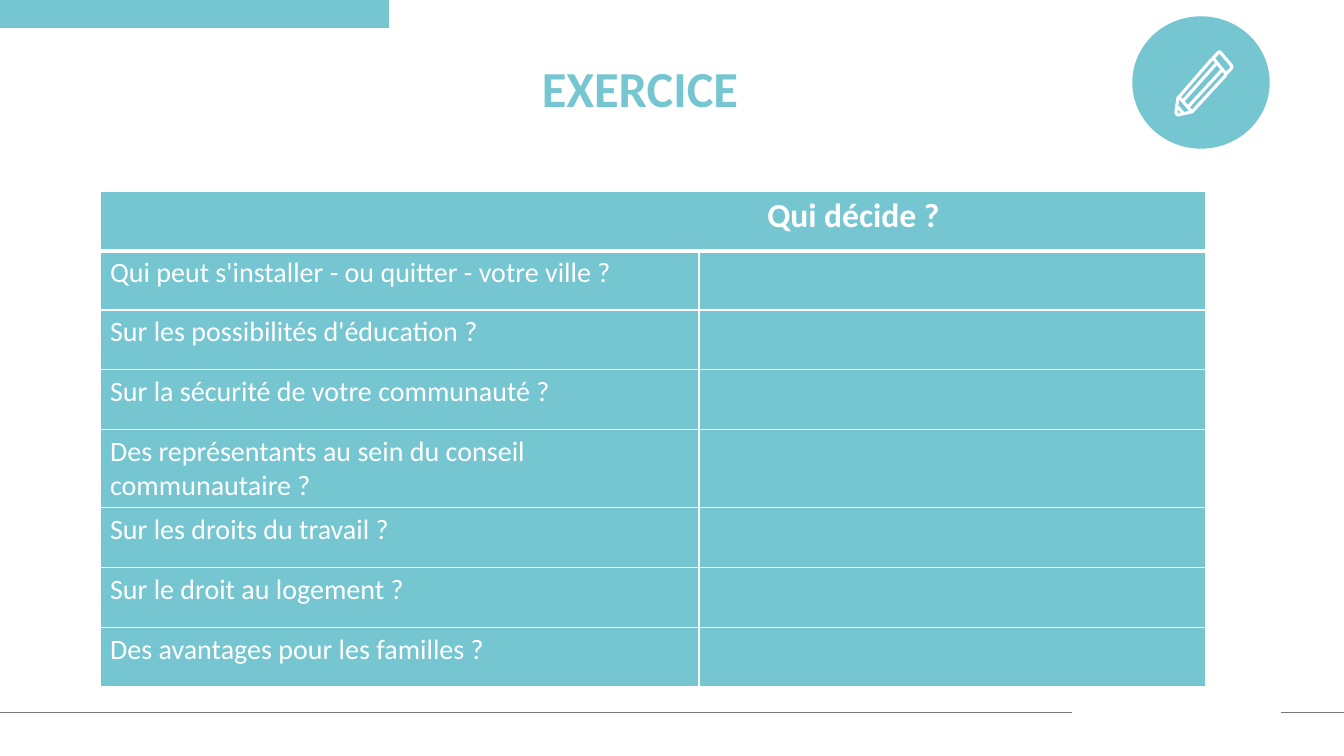
import pptx
import pptx.util
import pptx.oxml
import pptx.dml.color
import pptx.enum.shapes
import pptx.enum.text
import pptx.oxml.ns

PX = 914400 / 100.8
THEME = {
    "teal": pptx.dml.color.RGBColor.from_string("76C6D2"),
    "white": pptx.dml.color.RGBColor.from_string("FFFFFF"),
    "grey": pptx.dml.color.RGBColor.from_string("797979"),
    "font": "Calibri",
    "title": pptx.util.Pt(36),
    "header": pptx.util.Pt(24),
    "body": pptx.util.Pt(20),
}
SHAPE_TYPE = pptx.enum.shapes.MSO_SHAPE


def px(*lengths):
    return [pptx.util.Emu(round(length * PX)) for length in lengths]


def write(paragraph, text, size, color, bold=False):
    paragraph.text = text
    font = paragraph.runs[0].font
    for name, value in {"name": THEME["font"], "size": size, "bold": bold}.items():
        setattr(font, name, value)
    font.color.rgb = color


presentation = pptx.Presentation()
presentation.slide_width, presentation.slide_height = px(1344, 756)
slide = presentation.slides.add_slide(presentation.slide_layouts[6])

# Top band and icon disc
for kind, box in [
    (SHAPE_TYPE.RECTANGLE, (0, 0, 389, 28)),
    (SHAPE_TYPE.FLOWCHART_CONNECTOR, (1133, 17, 136, 131)),
]:
    shape = slide.shapes.add_shape(kind, *px(*box))
    shape.shadow.inherit = False
    shape.fill.solid()
    shape.fill.fore_color.rgb = THEME["teal"]
    if kind == SHAPE_TYPE.RECTANGLE:
        shape.line.fill.background()
    else:
        shape.line.color.rgb = THEME["teal"]
        shape.line.width = pptx.util.Pt(1)

# Footer rule, in two pieces
for start, end in [(1072, 0), (1344, 1281)]:
    rule = slide.shapes.add_connector(
        pptx.enum.shapes.MSO_CONNECTOR.STRAIGHT, *px(start, 712, end, 712))
    rule.line.color.rgb = THEME["grey"]
    rule.line.width = pptx.util.Pt(0.5)
    rule._element.spPr.append(pptx.oxml.parse_xml(
        f'<a:effectLst {pptx.oxml.ns.nsdecls("a")}/>'))

# Pencil strokes: (points, closed)
pencil = [
    ([(1231, 65), (1220, 52), (1219, 52), (1218, 53), (1213, 58),
      (1226, 74), (1231, 69), (1232, 67)], True),
    ([(1222, 70), (1188, 107)], False),
    ([(1212, 59), (1179, 97), (1178, 98), (1176, 112), (1176, 113),
      (1177, 114), (1178, 115), (1191, 112), (1192, 112), (1226, 75)], False),
    ([(1183, 101), (1216, 64)], False),
    ([(1183, 113), (1178, 107)], False),
    ([(1179, 97), (1192, 112)], False),
]
for points, closed in pencil:
    builder = slide.shapes.build_freeform(*points[0], scale=PX)
    builder.add_line_segments(points[1:], close=closed)
    stroke = builder.convert_to_shape()
    stroke.shadow.inherit = False
    stroke.fill.background()
    stroke.line.color.rgb = THEME["white"]
    stroke.line.width = pptx.util.Pt(2.25)

# Title
title = slide.shapes.add_textbox(*px(532, 59, 235, 70)).text_frame
title.word_wrap = True
title.vertical_anchor = pptx.enum.text.MSO_ANCHOR.TOP
title.paragraphs[0].line_spacing = 0.9
write(title.paragraphs[0], "EXERCICE", THEME["title"], THEME["teal"], True)

# Table of questions
questions = [
    "Qui peut s'installer - ou quitter - votre ville ?",
    "Sur les possibilités d'éducation ?",
    "Sur la sécurité de votre communauté ?",
    "Des représentants au sein du conseil communautaire ?",
    "Sur les droits du travail ?",
    "Sur le droit au logement ?",
    "Des avantages pour les familles ?",
]
row_heights = [60, 59, 60, 60, 78, 60, 60, 59]
table = slide.shapes.add_table(
    len(row_heights), 2, *px(100, 191, 1106, sum(row_heights))).table
table.first_row = table.horz_banding = False
for column, width in zip(table.columns, px(599, 507)):
    column.width = width
for row, height in zip(table.rows, px(*row_heights)):
    row.height = height

for row_index, row in enumerate(table.rows):
    for cell in row.cells:
        properties = cell._tc.get_or_add_tcPr()
        for side in ("L", "R", "T", "B"):
            thick = (row_index, side) in [(0, "B"), (1, "T")]
            properties.append(pptx.oxml.parse_xml(
                f'<a:ln{side} {pptx.oxml.ns.nsdecls("a")} w="{38100 if thick else 12700}">'
                f'<a:solidFill><a:srgbClr val="{THEME["white"]}"/></a:solidFill></a:ln{side}>'))
        cell.fill.solid()
        cell.fill.fore_color.rgb = THEME["teal"]

header = table.cell(0, 0)
header.merge(table.cell(0, 1))
header.margin_left = px(411)[0]  # centres the heading right of the questions
header_paragraph = header.text_frame.paragraphs[0]
header_paragraph.alignment = pptx.enum.text.PP_ALIGN.CENTER
write(header_paragraph, "Qui décide ?", THEME["header"], THEME["white"], True)
for row_index, question in enumerate(questions, 1):
    write(table.cell(row_index, 0).text_frame.paragraphs[0], question,
          THEME["body"], THEME["white"])

presentation.save("out.pptx")
